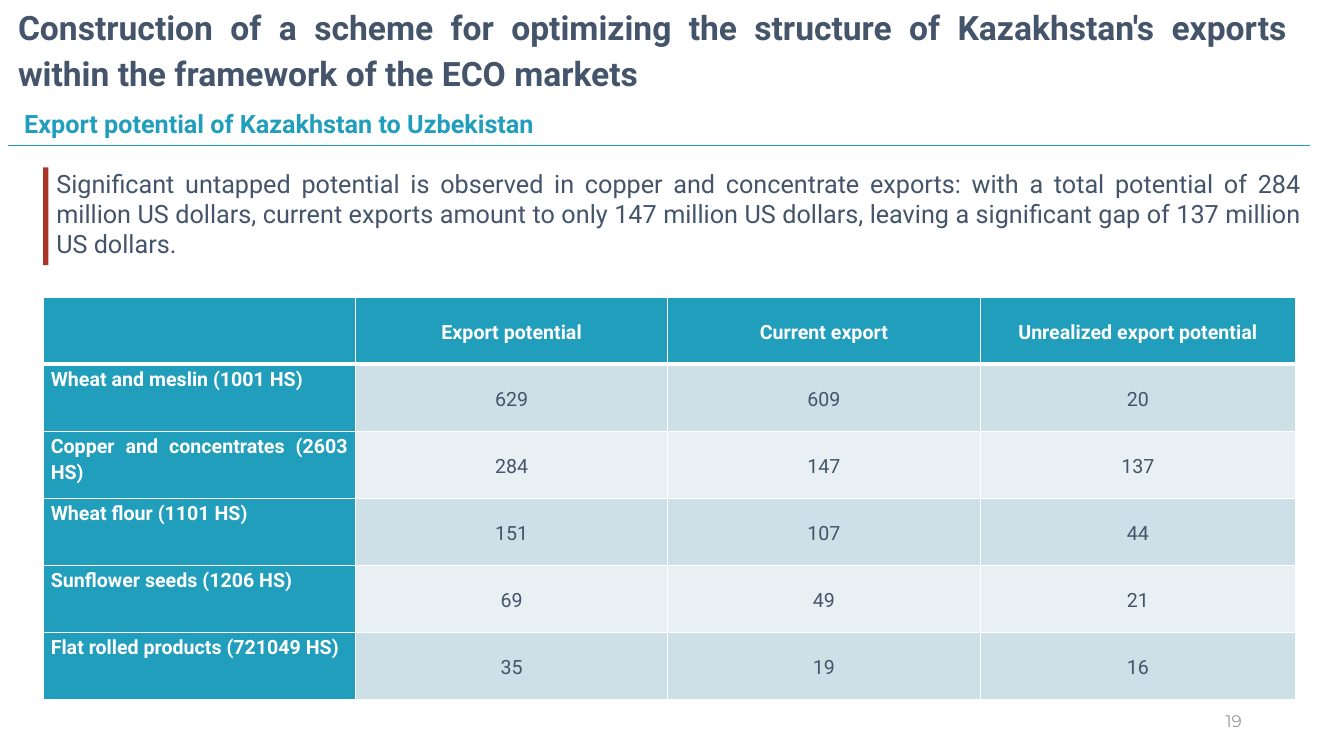
"""Build the slide on Kazakhstan's export potential to Uzbekistan."""
import dataclasses
import typing

import lxml.etree
import pptx
import pptx.dml.color
import pptx.enum.shapes
import pptx.enum.text
import pptx.oxml.ns
import pptx.util

Cm = pptx.util.Cm
Pt = pptx.util.Pt
qn = pptx.oxml.ns.qn
Align = pptx.enum.text.PP_ALIGN
Anchor = pptx.enum.text.MSO_ANCHOR

NAVY, TEAL, RED, GREY, WHITE = "44546A", "219EBC", "AB3428", "9499A1", "FFFFFF"
BANDS = ("CDDFE7", "E8F0F3")


@dataclasses.dataclass(frozen=True)
class Product:
    name: str
    potential: int
    current: int
    unrealized: int


@dataclasses.dataclass(frozen=True)
class Passage:
    text: str
    box: tuple[float, float, float, float]
    style: dict[str, typing.Any]


HEADINGS = ("", "Export potential", "Current export", "Unrealized export potential")
PRODUCTS = (
    Product("Wheat and meslin (1001 HS)", 629, 609, 20),
    Product("Copper and concentrates (2603 HS)", 284, 147, 137),
    Product("Wheat flour (1101 HS)", 151, 107, 44),
    Product("Sunflower seeds (1206 HS)", 69, 49, 21),
    Product("Flat rolled products (721049 HS)", 35, 19, 16),
)
TITLE = Passage(
    "Construction of a scheme for optimizing the structure of Kazakhstan's exports "
    "within the framework of the ECO markets",
    (0.2, 0.23, 32.49, 1.91),
    dict(size=24, bold=True, anchor=Anchor.MIDDLE, spacing=1.15, after=6),
)
PASSAGES = (
    Passage(
        "Export potential of Kazakhstan to Uzbekistan",
        (0.36, 2.49, 17.15, 1.14),
        dict(size=18, color=TEAL, bold=True, spacing=1.15, after=6),
    ),
    Passage(
        "Significant untapped potential is observed in copper and concentrate exports: "
        "with a total potential of 284 million US dollars, current exports amount to only "
        "147 million US dollars, leaving a significant gap of 137 million US dollars.",
        (1.17, 4.11, 31.88, 2.57),
        dict(size=18),
    ),
    Passage(
        "19",
        (23.93, 17.65, 7.62, 1.02),
        dict(size=12, color=GREY, font="Montserrat", align=Align.RIGHT, anchor=Anchor.MIDDLE),
    ),
)


def rgb(value: str) -> pptx.dml.color.RGBColor:
    return pptx.dml.color.RGBColor.from_string(value)


def write(frame, text: str, *, size: float, color: str = NAVY, bold: bool = False,
          font: str = "Roboto", align=Align.JUSTIFY, anchor=Anchor.TOP,
          spacing: float = 1.0, after: float = 0) -> None:
    frame.word_wrap = True
    frame.vertical_anchor = anchor
    paragraph = frame.paragraphs[0]
    paragraph.alignment = align
    paragraph.line_spacing = spacing
    paragraph.space_before = Pt(0)
    paragraph.space_after = Pt(after)
    run = paragraph.add_run()
    run.text = text
    run.font.name = font
    run.font.size = Pt(size)
    run.font.bold = bold
    run.font.color.rgb = rgb(color)


def add_title(slide, title: Passage) -> None:
    holder = slide.shapes.title
    holder.left, holder.top, holder.width, holder.height = map(Cm, title.box)
    holder.text_frame.auto_size = pptx.enum.text.MSO_AUTO_SIZE.NONE
    write(holder.text_frame, title.text, **title.style)


def add_passage(slide, passage: Passage) -> None:
    textbox = slide.shapes.add_textbox(*map(Cm, passage.box))
    write(textbox.text_frame, passage.text, **passage.style)


def add_divider(slide) -> None:
    divider = slide.shapes.add_connector(
        pptx.enum.shapes.MSO_CONNECTOR.STRAIGHT, Cm(0.2), Cm(3.66), Cm(33.02), Cm(3.66))
    divider.line.color.rgb = rgb(TEAL)
    divider.line.width = Pt(0.5)
    lxml.etree.SubElement(divider.element.spPr, qn("a:effectLst"))


def add_accent_bar(slide) -> None:
    bar = slide.shapes.add_shape(
        pptx.enum.shapes.MSO_SHAPE.RECTANGLE, Cm(1.09), Cm(4.22), Cm(0.13), Cm(2.46))
    bar.shadow.inherit = False
    bar.fill.solid()
    bar.fill.fore_color.rgb = rgb(RED)
    bar.line.fill.background()


def set_borders(cell, widths: dict[str, float]) -> None:
    properties = cell._tc.get_or_add_tcPr()
    for position, (side, width) in enumerate(widths.items()):
        border = lxml.etree.Element(qn(f"a:ln{side}"), w=str(Pt(width)))
        fill = lxml.etree.SubElement(border, qn("a:solidFill"))
        lxml.etree.SubElement(fill, qn("a:srgbClr"), val=WHITE)
        properties.insert(position, border)


def add_export_table(slide) -> None:
    rows = [HEADINGS, *map(dataclasses.astuple, PRODUCTS)]
    widths = (7.87, 7.87, 7.87, 7.95)
    row_height = 1.69
    table = slide.shapes.add_table(
        len(rows), len(widths), Cm(1.09), Cm(7.49),
        Cm(sum(widths)), Cm(row_height * len(rows))).table
    table.horz_banding = False
    for column, width in zip(table.columns, widths):
        column.width = Cm(width)
    for r, values in enumerate(rows):
        table.rows[r].height = Cm(row_height)
        for c, value in enumerate(values):
            cell = table.cell(r, c)
            heading = r == 0 or c == 0
            cell.fill.solid()
            cell.fill.fore_color.rgb = rgb(TEAL if heading else BANDS[(r - 1) % 2])
            set_borders(cell, {"L": 1, "R": 1, "T": 3 if r == 1 else 1, "B": 3 if r == 0 else 1})
            cell.margin_left = cell.margin_right = Cm(0.19)
            cell.margin_top = cell.margin_bottom = 0
            product_name = c == 0 and r > 0
            if value != "":
                write(cell.text_frame, str(value), size=14, bold=heading,
                      color=WHITE if heading else NAVY,
                      align=Align.JUSTIFY if product_name else Align.CENTER,
                      spacing=1.15, after=10)
                cell.vertical_anchor = Anchor.TOP if product_name else Anchor.MIDDLE


def main() -> None:
    presentation = pptx.Presentation()
    presentation.slide_width = Cm(33.87)
    presentation.slide_height = Cm(19.05)
    slide = presentation.slides.add_slide(presentation.slide_layouts[5])
    add_title(slide, TITLE)
    add_divider(slide)
    add_accent_bar(slide)
    for passage in PASSAGES:
        add_passage(slide, passage)
    add_export_table(slide)
    presentation.save("out.pptx")


if __name__ == "__main__":
    main()
